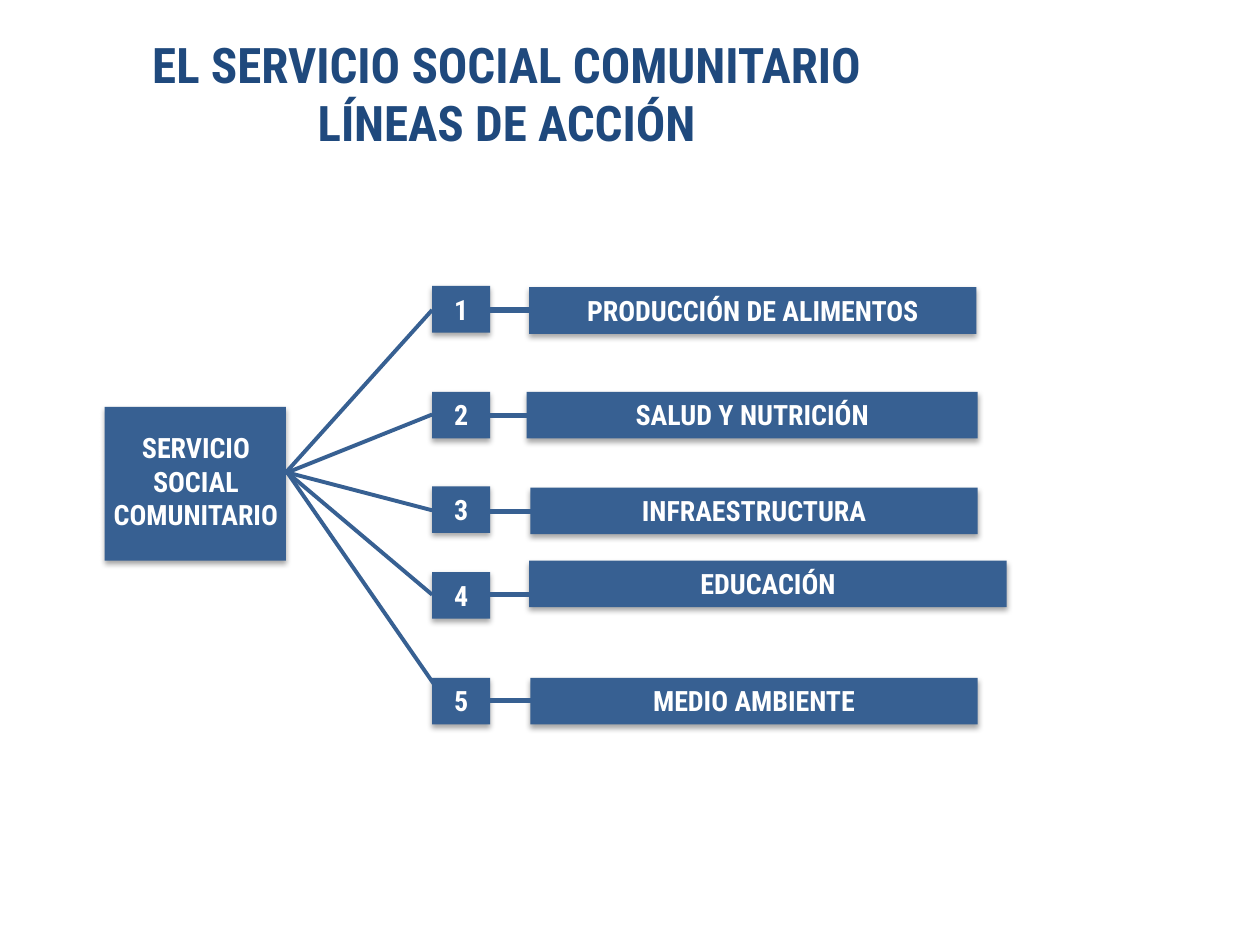
"""Build the slide on the lines of action of community social service."""
import pptx
import pptx.dml.color
import pptx.enum.shapes
import pptx.enum.text
import pptx.oxml
import pptx.util

Inches = pptx.util.Inches
Kind = pptx.enum.shapes.MSO_SHAPE
Link = pptx.enum.shapes.MSO_CONNECTOR
Text = pptx.enum.text
BLUE, NAVY, WHITE = "376092", "1F497D", "FFFFFF"
SPACE = 'xmlns:a="http://schemas.openxmlformats.org/drawingml/2006/main"'
SHADOW = (f'<a:effectLst {SPACE}><a:outerShdw blurRad="40000" dist="23000" '
          'dir="5400000" rotWithShape="0"><a:srgbClr val="000000">'
          '<a:alpha val="35000"/></a:srgbClr></a:outerShdw></a:effectLst>')


def tint(hue):
    return pptx.dml.color.RGBColor.from_string(hue)


def write(shape, text, size=16, hue=WHITE, fit=Text.MSO_AUTO_SIZE.SHAPE_TO_FIT_TEXT):
    frame = shape.text_frame
    frame.text = text
    frame.word_wrap = True
    frame.auto_size = fit
    frame.vertical_anchor = Text.MSO_ANCHOR.TOP
    frame.margin_left = frame.margin_right = Inches(0.1)
    frame.margin_top = frame.margin_bottom = Inches(0.05)
    for para in frame.paragraphs:
        para.alignment = Text.PP_ALIGN.CENTER
        para.line_spacing = 1.0
        para.space_before = pptx.util.Pt(0)
        font = para.font
        font.name, font.size, font.bold = "Roboto Condensed", pptx.util.Pt(size), True
        font.color.rgb = tint(hue)


deck = pptx.Presentation()
deck.slide_width, deck.slide_height = Inches(10), Inches(7.5)
slide = deck.slides.add_slide(deck.slide_layouts[5])
shapes = slide.shapes

title = shapes.title
title.left, title.top = Inches(0.28), Inches(0.22)
title.width, title.height = Inches(7.48), Inches(0.54)
write(title, "EL SERVICIO SOCIAL COMUNITARIO\nLÍNEAS DE ACCIÓN", size=28, hue=NAVY,
      fit=Text.MSO_AUTO_SIZE.NONE)

rows = [
    ("PRODUCCIÓN DE ALIMENTOS", 4.2, 2.28, 3.55, 2.27, 2.46),
    ("SALUD Y NUTRICIÓN", 4.18, 3.11, 3.58, 3.11, 3.3),
    ("INFRAESTRUCTURA", 4.21, 3.87, 3.55, 3.86, 4.06),
    ("EDUCACIÓN", 4.2, 4.45, 3.79, 4.54, 4.72),
    ("MEDIO AMBIENTE", 4.21, 5.38, 3.55, 5.38, 5.56),
]
boxes = [(Kind.ROUNDED_RECTANGLE, "", 0.83, 3.23, 1.44, 1.22)]
lines = []
fans = [((2.17, 3.86), (3.43, 2.46))]
for end in ((3.43, 3.29), (3.43, 4.05), (3.43, 4.72), (3.59, 5.64)):
    fans.append(((2.28, 3.75), end))
for rank, (name, left, top, width, high, mid) in enumerate(rows, 1):
    boxes.append((Kind.RECTANGLE, name, left, top, width, 0.37))
    boxes.append((Kind.RECTANGLE, str(rank), 3.43, high, 0.46, 0.37))
    start = 3.88 if rank == 1 else 3.82
    lines.append(((start, mid), (start + 0.41, mid), 3))
lines += [(start, end, 2.25) for start, end in fans]

for kind, text, *place in boxes:
    box = shapes.add_shape(kind, *map(Inches, place))
    if kind == Kind.ROUNDED_RECTANGLE:
        box.adjustments[0] = 0
    box.fill.solid()
    box.fill.fore_color.rgb = tint(BLUE)
    box.line.fill.background()
    box._element.spPr.append(pptx.oxml.parse_xml(SHADOW))
    if text:
        write(box, text)

label = shapes.add_textbox(Inches(0.69), Inches(3.37), Inches(1.73), Inches(0.91))
write(label, "SERVICIO SOCIAL COMUNITARIO")

for start, end, weight in lines:
    line = shapes.add_connector(Link.STRAIGHT, *map(Inches, start + end))
    line.line.color.rgb = tint(BLUE)
    line.line.width = pptx.util.Pt(weight)
    line._element.spPr.append(pptx.oxml.parse_xml(f"<a:effectLst {SPACE}/>"))

deck.save("out.pptx")
